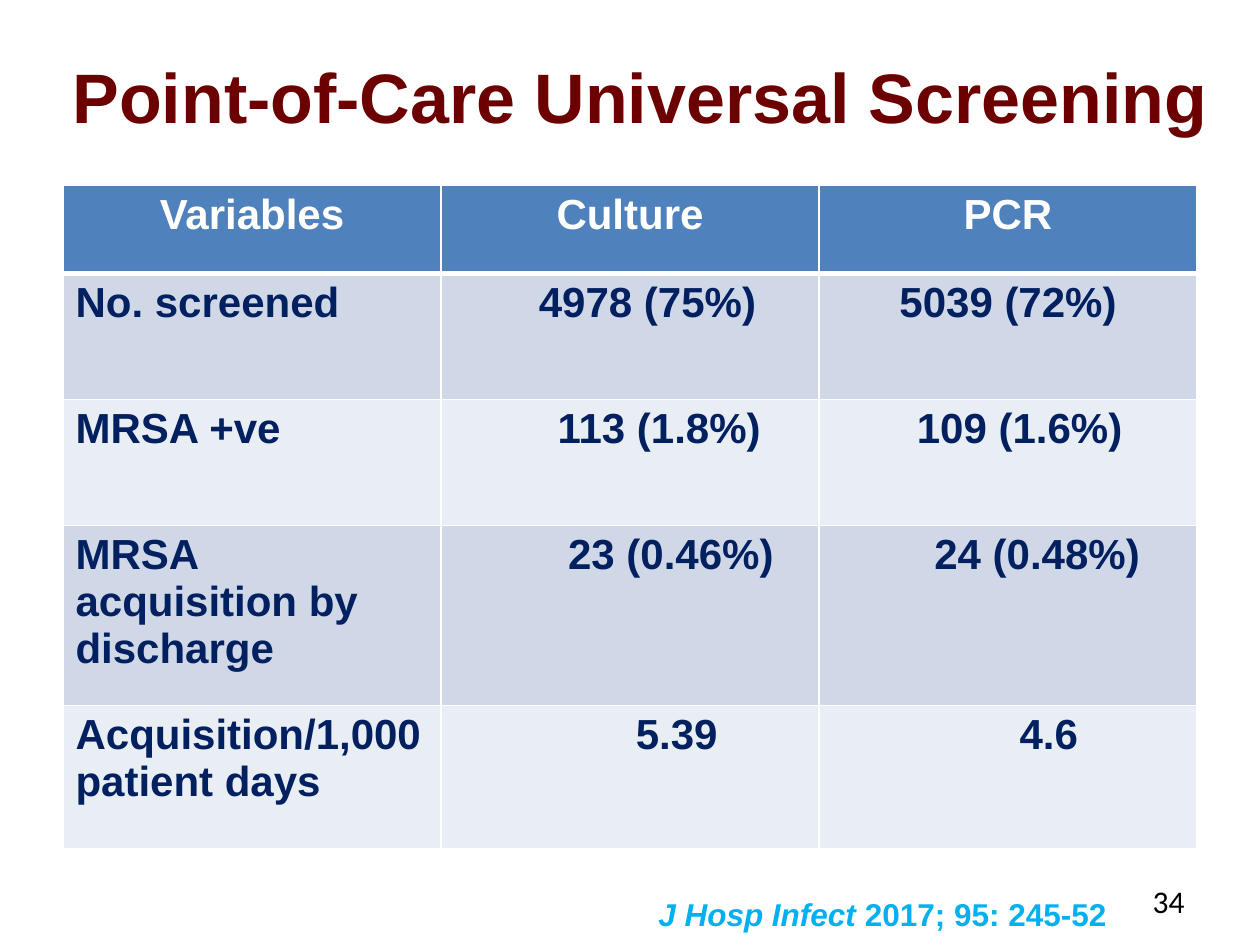
from lxml.etree import SubElement
from pptx import Presentation
from pptx.dml.color import RGBColor
from pptx.enum.text import MSO_ANCHOR, PP_ALIGN
from pptx.oxml.ns import qn
from pptx.util import Pt

COLORS = {
    "title": "6C0000", "header": "4F81BD", "odd band": "D0D8E8", "even band": "E9EDF4",
    "body": "002060", "citation": "00B0F0", "white": "FFFFFF", "black": "000000",
}
TITLE = "Point-of-Care Universal Screening"
CITATION = [("J Hosp Infect ", True), ("2017; 95: 245-52", False)]
SLIDE_NUMBER = "34"
ROWS = [
    ("Variables", "Culture", "PCR"),
    ("No. screened", "4978 (75%)", "5039 (72%)"),
    ("MRSA +ve", "113 (1.8%)", "109 (1.6%)"),
    ("MRSA acquisition by discharge", "23 (0.46%)", "24 (0.48%)"),
    ("Acquisition/1,000 patient days", "5.39", "4.6"),
]
ROW_HEIGHTS = [50.4, 72, 72, 102.96, 82.08]
# Extra left margin that moves each centred value to the right
VALUE_INDENTS = [(0, 0, 0), (0, 20, 0), (0, 33.3, 13.3), (0, 46.7, 33.3), (0, 53.3, 46.7)]
COLUMN_WIDTH = 216
CELL_MARGIN = 7.2
THIN, THICK = 1, 3


def add_run(paragraph, text, color, **formats):
    run = paragraph.add_run()
    run.text = text
    run.font.color.rgb = RGBColor.from_string(COLORS[color])
    for name, value in {"name": "Arial", "bold": True, **formats}.items():
        setattr(run.font, name, value)


def add_text_box(slide, box, alignment, anchor):
    """Add an empty wrapping text box and return its first paragraph."""
    frame = slide.shapes.add_textbox(*map(Pt, box)).text_frame
    frame.word_wrap = True
    frame.vertical_anchor = anchor
    paragraph = frame.paragraphs[0]
    paragraph.alignment = alignment
    return paragraph


def add_borders(cell, widths):
    properties = cell._tc.get_or_add_tcPr()
    for side, width in widths.items():
        line = SubElement(properties, qn(f"a:ln{side}"), w=str(Pt(width)))
        fill = SubElement(line, qn("a:solidFill"))
        SubElement(fill, qn("a:srgbClr"), val=COLORS["white"])


def add_results_table(slide):
    column_count = len(ROWS[0])
    frame = slide.shapes.add_table(
        len(ROWS), column_count, Pt(36), Pt(105.84),
        Pt(COLUMN_WIDTH * column_count), Pt(sum(ROW_HEIGHTS)))
    table = frame.table
    for column in table.columns:
        column.width = Pt(COLUMN_WIDTH)
    for row_index, (texts, height, indents) in enumerate(zip(ROWS, ROW_HEIGHTS, VALUE_INDENTS)):
        table.rows[row_index].height = Pt(height)
        is_header = row_index == 0
        band = "header" if is_header else "odd band" if row_index % 2 else "even band"
        for column_index, (text, indent) in enumerate(zip(texts, indents)):
            cell = table.cell(row_index, column_index)
            add_borders(cell, {
                "L": THIN, "R": THIN,
                "T": THICK if row_index == 1 else THIN,
                "B": THICK if is_header else THIN})
            cell.fill.solid()
            cell.fill.fore_color.rgb = RGBColor.from_string(COLORS[band])
            cell.margin_left = Pt(CELL_MARGIN + indent)
            paragraph = cell.text_frame.paragraphs[0]
            is_centred = is_header or column_index > 0
            paragraph.alignment = PP_ALIGN.CENTER if is_centred else PP_ALIGN.LEFT
            add_run(paragraph, text, "white" if is_header else "body", size=Pt(24))


def main():
    presentation = Presentation()
    presentation.slide_width, presentation.slide_height = Pt(720), Pt(540)
    slide = presentation.slides.add_slide(presentation.slide_layouts[6])

    title = add_text_box(slide, (30.96, 20.16, 669.6, 68.4), PP_ALIGN.CENTER, MSO_ANCHOR.MIDDLE)
    add_run(title, TITLE, "title", size=Pt(40))

    add_results_table(slide)

    citation = add_text_box(slide, (288, 485.28, 351.36, 51.12), PP_ALIGN.RIGHT, MSO_ANCHOR.BOTTOM)
    for text, italic in CITATION:
        add_run(citation, text, "citation", size=Pt(18), italic=italic)

    number = add_text_box(slide, (516.24, 500.4, 167.76, 28.8), PP_ALIGN.RIGHT, MSO_ANCHOR.MIDDLE)
    add_run(number, SLIDE_NUMBER, "black", size=Pt(18), name="Calibri", bold=False)

    presentation.save("out.pptx")


if __name__ == "__main__":
    main()
